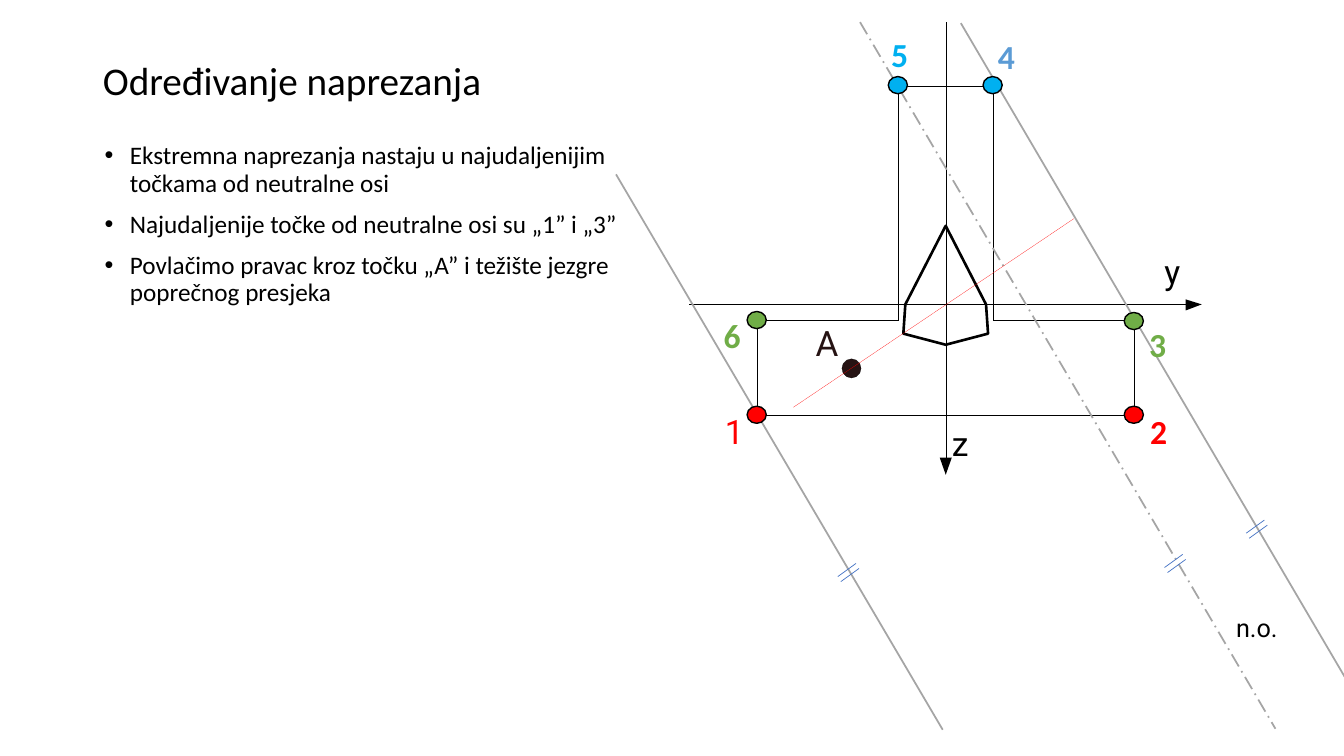
import itertools

import lxml.etree
import pptx
import pptx.dml.color
import pptx.enum.dml
import pptx.enum.shapes
import pptx.enum.text
import pptx.oxml.ns
import pptx.util

PX = 9144  # EMU per px, 100 px to the inch

HUES = {
    "black": "000000",
    "dark": "261313",
    "gray": "A5A5A5",
    "red": "FF0000",
    "green": "70AD47",
    "cyan": "00B0F0",
    "blue": "5B9BD5",
    "tick": "4472C4",
}
THIN = 0.13
SHAPE = pptx.enum.shapes.MSO_SHAPE
FIT = pptx.enum.text.MSO_AUTO_SIZE

BULLETS = [
    "Ekstremna naprezanja nastaju u najudaljenijim točkama od neutralne osi",
    "Najudaljenije točke od neutralne osi su „1” i „3”",
    "Povlačimo pravac kroz točku „A” i težište jezgre poprečnog presjeka",
]
# Corners of the cross-section, in drawing order
SECTION = [(891, 318), (751, 318), (751, 412), (1125, 412),
           (1125, 318), (985, 318), (985, 85), (891, 85)]
KERNEL = [(896, 331), (898, 302), (938, 224), (978, 302), (980, 331), (938, 342)]
# Left and top of each node with its colour
NODES = [
    (741, 403, "red"), (1115, 403, "red"), (1115, 310, "green"),
    (975, 76, "cyan"), (881, 76, "cyan"), (741, 309, "green"),
]
# Bold node numbers: text, left, top, colour
NUMBERS = [
    ("2", 1131, 403, "red"), ("3", 1130, 316, "green"), ("4", 980, 31, "blue"),
    ("5", 874, 29, "cyan"), ("6", 708, 308, "green"),
]
# Plain labels: text, box, size, colour
LABELS = [
    ("A", (809, 319, 36, 51), 25, "dark"),
    ("z", (944, 420, 32, 55), 24, "black"),
    ("y", (1155, 249, 34, 55), 24, "black"),
    ("1", (719, 408, 18, 40), 24, "red"),
    ("n.o.", (1226, 607, 46, 30), 18, "black"),
]
TICKS = [(831, 572), (1155, 563), (1236, 529)]


def emu(*sizes):
    return [size * PX for size in sizes]


def rgb(hue):
    return pptx.dml.color.RGBColor.from_string(HUES[hue])


def apply(item, values):
    for name, value in values.items():
        setattr(item, name, value)


def style(font, size, hue, face="Calibri", bold=False):
    apply(font, {"size": pptx.util.Pt(size), "name": face, "bold": bold})
    font.color.rgb = rgb(hue)


def stroke(line, hue, width):
    line.color.rgb = rgb(hue)
    line.width = pptx.util.Pt(width)


def add_line(shapes, start, end, hue="black", width=THIN, dash=None):
    kind = pptx.enum.shapes.MSO_CONNECTOR.STRAIGHT
    link = shapes.add_connector(kind, *emu(*start, *end))
    stroke(link.line, hue, width)
    if dash:
        link.line.dash_style = dash
    props = link._element.spPr
    lxml.etree.SubElement(props, pptx.oxml.ns.qn("a:effectLst"))


def add_dot(shapes, kind, box, fill, edge, width):
    dot = shapes.add_shape(kind, *emu(*box))
    dot.shadow.inherit = False
    dot.fill.solid()
    dot.fill.fore_color.rgb = rgb(fill)
    stroke(dot.line, edge, width)


def add_outline(shapes, points, fill=None, width=None):
    pen = shapes.build_freeform(*points[0], scale=PX)
    pen.add_line_segments(points[1:], close=True)
    form = pen.convert_to_shape()
    form.shadow.inherit = False
    if fill:
        form.fill.solid()
        form.fill.fore_color.rgb = rgb(fill)
    else:
        form.fill.background()
    if width:
        stroke(form.line, "black", width)
    else:
        form.line.fill.background()


def add_label(shapes, text, box, size, hue, face="Roboto", bold=False, inset=(0, 0)):
    frame = shapes.add_textbox(*emu(*box)).text_frame
    side, end = emu(*inset)
    apply(frame, {
        "word_wrap": False, "auto_size": FIT.SHAPE_TO_FIT_TEXT,
        "margin_left": side, "margin_right": side,
        "margin_top": end, "margin_bottom": end,
    })
    run = frame.paragraphs[0].add_run()
    run.text = text
    style(run.font, size, hue, face, bold)


def add_title(slide, text):
    title = slide.shapes.title
    apply(title, dict(zip(("left", "top", "width", "height"), emu(92, 40, 567, 84))))
    frame = title.text_frame
    frame.text = text
    apply(frame, {
        "auto_size": FIT.NONE, "word_wrap": True,
        "vertical_anchor": pptx.enum.text.MSO_ANCHOR.MIDDLE,
    })
    para = frame.paragraphs[0]
    apply(para, {"alignment": pptx.enum.text.PP_ALIGN.LEFT, "line_spacing": 0.9})
    style(para.runs[0].font, 28, "black")


def add_bullets(shapes, items):
    frame = shapes.add_textbox(*emu(94, 137, 567, 476)).text_frame
    frame.word_wrap = True
    for index, item in enumerate(items):
        para = frame.add_paragraph() if index else frame.paragraphs[0]
        props = para._p.get_or_add_pPr()
        props.set("marL", str(25 * PX))
        props.set("indent", str(-25 * PX))
        for tag, key, value in (("a:buFont", "typeface", "Arial"), ("a:buChar", "char", "•")):
            lxml.etree.SubElement(props, pptx.oxml.ns.qn(tag)).set(key, value)
        apply(para, {"line_spacing": 0.9, "space_before": pptx.util.Pt(10 if index else 0)})
        run = para.add_run()
        run.text = item
        style(run.font, 18, "black")


def add_tick(shapes, left, low):
    group = shapes.add_group_shape()
    for right, down in ((0, 0), (3, 5)):
        start = (left + right, low + down)
        add_line(group.shapes, start, (start[0] + 18, start[1] - 13), "tick", 0.5)


def main():
    deck = pptx.Presentation()
    deck.slide_width, deck.slide_height = emu(1333, 750)
    slide = deck.slides.add_slide(deck.slide_layouts[5])
    shapes = slide.shapes

    # Text on the left
    add_title(slide, "Određivanje naprezanja")
    add_bullets(shapes, BULLETS)

    # Cross-section
    for start, end in itertools.pairwise(SECTION + SECTION[:1]):
        add_line(shapes, start, end)

    # Axes z and y
    add_line(shapes, (938, 456), (938, 22))
    add_outline(shapes, [(944, 454), (938, 471), (932, 454)], "black")
    add_line(shapes, (1177, 302), (683, 302))
    add_outline(shapes, [(1176, 297), (1192, 302), (1176, 308)], "black")

    # Load point A
    add_dot(shapes, SHAPE.OVAL, (835, 356, 19, 19), "dark", "black", THIN)

    # Neutral axis and its parallels
    dash = pptx.enum.dml.MSO_LINE.LONG_DASH_DOT
    add_line(shapes, (853, 22), (1265, 723), "gray", 1.25, dash)
    add_line(shapes, (611, 173), (935, 724), "gray", 1.25)
    add_line(shapes, (953, 23), (1344, 689), "gray", 1.25)

    # Kernel of the section
    add_outline(shapes, KERNEL, width=1.88)

    # Nodes and labels
    for left, top, hue in NODES:
        add_dot(shapes, SHAPE.FLOWCHART_CONNECTOR, (left, top, 19, 17), hue, "black", 1)
    for text, left, top, hue in NUMBERS:
        add_label(shapes, text, (left, top, 37, 50), 24, hue, "Calibri", True, (10, 5))
    for label in LABELS:
        add_label(shapes, *label)

    # Parallel marks
    for left, low in TICKS:
        add_tick(shapes, left, low)

    # Line through A and the centroid
    add_line(shapes, (787, 404), (1065, 217), "red")

    deck.save("out.pptx")


if __name__ == "__main__":
    main()
